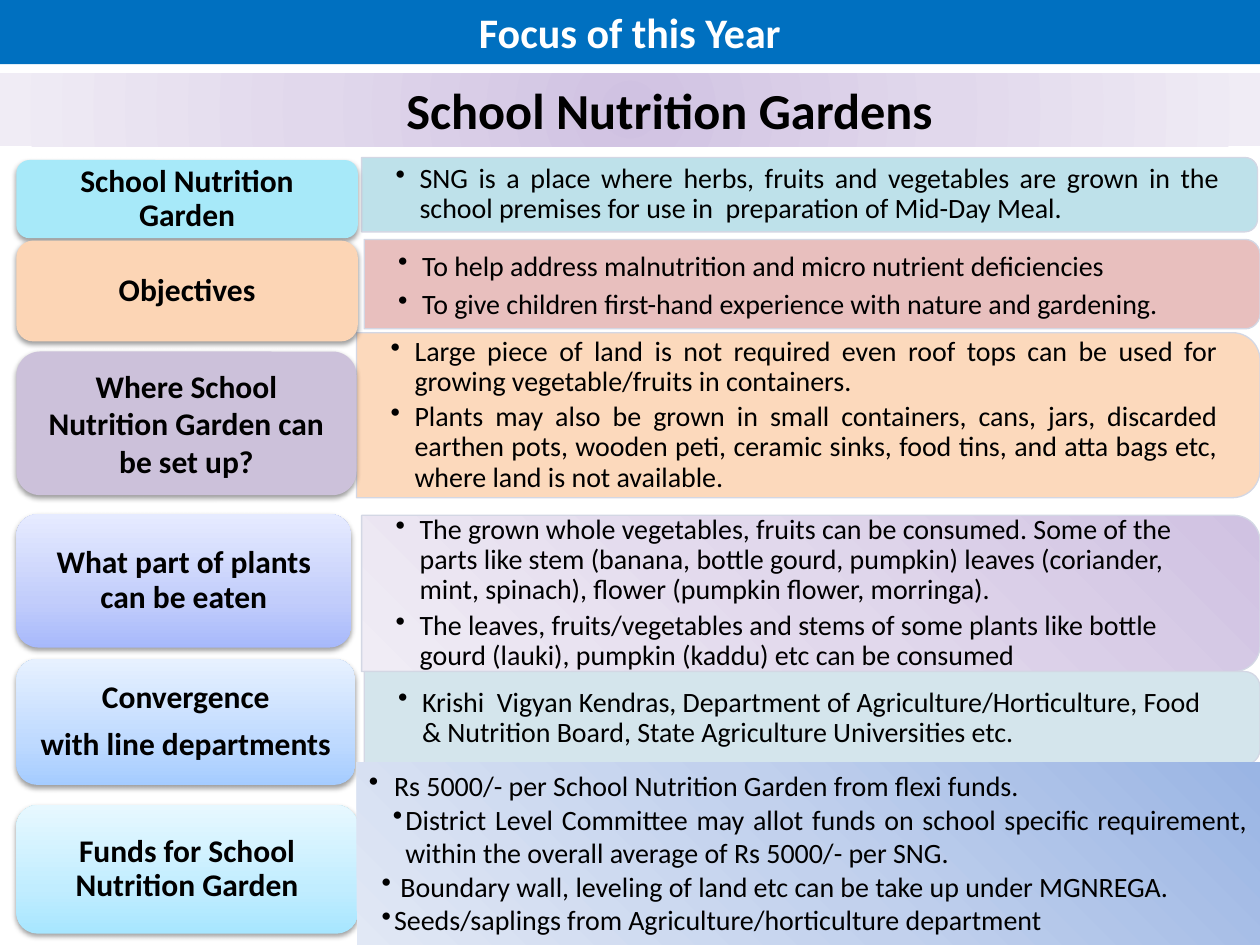
from dataclasses import dataclass

from lxml import etree
from pptx import Presentation
from pptx import util as u
from pptx.dml.color import RGBColor
from pptx.enum import shapes, text
from pptx.oxml import ns

Inches, Pt = u.Inches, u.Pt
Align, Anchor = text.PP_ALIGN, text.MSO_ANCHOR
FONT = "Calibri"
BLACK = RGBColor(0x00, 0x00, 0x00)
WHITE = RGBColor(0xFF, 0xFF, 0xFF)
BLUE = RGBColor(0x00, 0x70, 0xC0)
CYAN = RGBColor(0xA7, 0xE9, 0xF9)
TEAL = RGBColor(0xB7, 0xDE, 0xE8)
PINK = RGBColor(0xE6, 0xB9, 0xB8)
PEACH = RGBColor(0xFC, 0xD5, 0xB5)
LILAC = RGBColor(0xCC, 0xC1, 0xDA)
MIST = RGBColor(0xD0, 0xE3, 0xEA)
EDGE = RGBColor(0xD3, 0xD7, 0xE4)


@dataclass(frozen=True)
class Gradient:
    stops: tuple[tuple[int, RGBColor], ...]
    angle: int = 0
    focus: tuple[int, int, int, int] | None = None


@dataclass(frozen=True)
class Box:
    left: float
    top: float
    width: float
    height: float


@dataclass(frozen=True)
class Bullet:
    words: str
    align: Align = Align.LEFT
    margin: float = 0.19
    hanging: float = 0.19


@dataclass(frozen=True)
class Label:
    box: Box
    fill: RGBColor | Gradient
    lines: tuple[str, ...]
    inset: float = 0.12
    spacing: float = 0.9


@dataclass(frozen=True)
class Panel:
    box: Box
    fill: RGBColor | Gradient
    bullets: tuple[Bullet, ...]
    spacing: float = 0.9


def blend(positions: tuple[int, ...], *codes: str) -> tuple[tuple[int, RGBColor], ...]:
    return tuple((at, RGBColor.from_string(code)) for at, code in zip(positions, codes))


PURPLES = blend((0, 50, 100), "D0C2E2", "E1D8EC", "F0ECF5")
BLUES = blend((0, 50, 100), "9AB5E4", "C2D1ED", "E1E8F5")
VIOLET_RISE = Gradient(blend((0, 35, 100), "A7B9FB", "C2CDFB", "E6EBFF"), 270)
BLUE_RISE = Gradient(blend((0, 35, 100), "A5CCFF", "BFDAFF", "E7F1FF"), 270)
CYAN_RISE = Gradient(blend((0, 35, 100), "A7E6FF", "C1EDFF", "E7F8FF"), 270)

LABELS = (
    Label(Box(0.13, 1.27, 2.71, 0.62), CYAN, ("School Nutrition Garden",)),
    Label(Box(0.13, 1.91, 2.71, 0.8), PEACH, ("Objectives",)),
    Label(Box(0.13, 2.79, 2.7, 1.14), LILAC,
          ("Where School Nutrition Garden can be set up?",), 0.2, 1.0),
    Label(Box(0.13, 4.08, 2.66, 1.06), VIOLET_RISE, ("What part of plants can be eaten",)),
    Label(Box(0.13, 5.23, 2.69, 1), BLUE_RISE, ("Convergence", "with line departments")),
    Label(Box(0.13, 6.39, 2.71, 1.02), CYAN_RISE, ("Funds for School Nutrition Garden",)),
)
PANELS = (
    Panel(Box(2.87, 1.25, 7.11, 0.59), TEAL, (
        Bullet("SNG is a place where herbs, fruits and vegetables are grown in the school "
               "premises for use in  preparation of Mid-Day Meal.", Align.JUSTIFY),)),
    Panel(Box(2.89, 1.9, 7.11, 0.71), PINK, (
        Bullet("To help address malnutrition and micro nutrient deficiencies", Align.JUSTIFY),
        Bullet("To give children first-hand experience with nature and gardening.")), 1.0),
    Panel(Box(2.83, 2.64, 7.17, 1.31), PEACH, (
        Bullet("Large piece of land is not required even roof tops can be used for growing "
               "vegetable/fruits in containers.", Align.JUSTIFY),
        Bullet("Plants may also be grown in small containers, cans, jars, discarded earthen "
               "pots, wooden peti, ceramic sinks, food tins, and atta bags etc, where land "
               "is not available.", Align.JUSTIFY))),
    Panel(Box(2.87, 4.09, 7.13, 1.24), Gradient(PURPLES, 135), (
        Bullet("The grown whole vegetables, fruits can be consumed. Some of the parts like "
               "stem (banana, bottle gourd, pumpkin) leaves (coriander, mint, spinach), "
               "flower (pumpkin flower, morringa)."),
        Bullet("The leaves, fruits/vegetables and stems of some plants like bottle gourd "
               "(lauki), pumpkin (kaddu) etc can be consumed"))),
    Panel(Box(2.89, 5.33, 7.11, 0.74), MIST, (
        Bullet("Krishi  Vigyan Kendras, Department of Agriculture/Horticulture, Food & "
               "Nutrition Board, State Agriculture Universities etc."),)),
)
FUNDS = (
    Bullet("Rs 5000/- per School Nutrition Garden from flexi funds.", Align.JUSTIFY, 0.2, 0.2),
    Bullet("District Level Committee may allot funds on school specific requirement, within "
           "the overall average of Rs 5000/- per SNG.", Align.JUSTIFY, 0.29, 0.1),
    Bullet("Boundary wall, leveling of land etc can be take up under MGNREGA.",
           Align.JUSTIFY, 0.25, 0.15),
    Bullet("Seeds/saplings from Agriculture/horticulture department", Align.JUSTIFY, 0.2, 0.1),
)


def add(parent, tag: str, **attributes):
    return etree.SubElement(parent, ns.qn(tag), {k: str(v) for k, v in attributes.items()})


def paint(shape, fill: RGBColor | Gradient, opacity: int = 100) -> None:
    shape.fill.solid()
    solid = shape._element.spPr.find(ns.qn("a:solidFill"))
    if isinstance(fill, RGBColor):
        shape.fill.fore_color.rgb = fill
        if opacity < 100:
            add(solid[0], "a:alpha", val=opacity * 1000)
        return
    gradient = etree.Element(ns.qn("a:gradFill"), rotWithShape="0")
    stops = add(gradient, "a:gsLst")
    for position, color in fill.stops:
        add(add(stops, "a:gs", pos=position * 1000), "a:srgbClr", val=color)
    if fill.focus:
        way = add(gradient, "a:path", path="circle")
        add(way, "a:fillToRect", **{side: v * 1000 for side, v in zip("ltrb", fill.focus)})
    else:
        add(gradient, "a:lin", ang=fill.angle * 60000, scaled=0)
    solid.getparent().replace(solid, gradient)


def place(box: Box) -> tuple[u.Length, ...]:
    return Inches(box.left), Inches(box.top), Inches(box.width), Inches(box.height)


def add_block(page, kind, box: Box, fill: RGBColor | Gradient, opacity: int = 100):
    shape = page.shapes.add_shape(kind, *place(box))
    shape.shadow.inherit = False
    paint(shape, fill, opacity)
    shape.line.fill.background()
    return shape


def set_frame(shape, anchor: Anchor, across: float, down: float):
    frame = shape.text_frame
    frame.word_wrap = True
    frame.vertical_anchor = anchor
    frame.margin_left = frame.margin_right = Inches(across)
    frame.margin_top = frame.margin_bottom = Inches(down)
    return frame


def write(frame, lines, size: float, color: RGBColor, bold: bool,
          align: Align = Align.CENTER, spacing: float = 1.0, after: float = 0) -> None:
    frame.text = "\n".join(lines)
    for para in frame.paragraphs:
        para.alignment = align
        para.line_spacing = spacing
        para.space_after = Pt(after)
        para.font.name, para.font.size, para.font.bold = FONT, Pt(size), bold
        para.font.color.rgb = color


def write_bullets(frame, bullets: tuple[Bullet, ...], spacing: float, after: float) -> None:
    write(frame, [b.words for b in bullets], 16, BLACK, False, spacing=spacing, after=after)
    for para, bullet in zip(frame.paragraphs, bullets):
        para.alignment = bullet.align
        props = para._p.get_or_add_pPr()
        props.set("marL", str(Inches(bullet.margin)))
        props.set("indent", str(-Inches(bullet.hanging)))
        mark = etree.Element(ns.qn("a:buChar"), char="•")
        props.find(ns.qn("a:defRPr")).addprevious(mark)


def draw_label(page, label: Label) -> None:
    shape = add_block(page, shapes.MSO_SHAPE.ROUNDED_RECTANGLE, label.box, label.fill)
    effects = shape._element.spPr.find(ns.qn("a:effectLst"))
    shadow = add(effects, "a:outerShdw", blurRad=Pt(3.1), dist=Pt(1.6), dir=5400000, rotWithShape=0)
    add(add(shadow, "a:srgbClr", val=BLACK), "a:alpha", val=38000)
    frame = set_frame(shape, Anchor.MIDDLE, label.inset, 0.08)
    write(frame, label.lines, 18, BLACK, True, spacing=label.spacing, after=7.7)


def draw_panel(page, panel: Panel) -> None:
    box = panel.box
    shift = (box.width - box.height) / 2
    upright = Box(box.left + shift, box.top - shift, box.height, box.width)
    shape = add_block(page, shapes.MSO_SHAPE.ROUND_2_SAME_RECTANGLE, upright, panel.fill, 90)
    shape.rotation = 90
    shape.line.color.rgb, shape.line.width = EDGE, Pt(0.75)
    curve = 0.05 * box.height
    inner = Box(box.left, box.top + curve, box.width - curve, box.height - 2 * curve)
    frame = set_frame(page.shapes.add_textbox(*place(inner)), Anchor.MIDDLE, 0.27, 0.14)
    write_bullets(frame, panel.bullets, panel.spacing, 2.9)


def main() -> None:
    deck = Presentation()
    deck.slide_width, deck.slide_height = Inches(10), Inches(7.5)
    page = deck.slides.add_slide(deck.slide_layouts[5])

    title = page.shapes.title
    title.left, title.top, title.width, title.height = place(Box(0, 0.58, 10, 0.58))
    paint(title, Gradient(PURPLES, focus=(50, 50, 50, 50)))
    frame = set_frame(title, Anchor.MIDDLE, 0.07, 0.04)
    frame.margin_left = Inches(0.7)
    write(frame, ["School Nutrition Gardens"], 28.8, BLACK, True)

    for panel in PANELS:
        draw_panel(page, panel)
    for label in LABELS:
        draw_label(page, label)

    rectangle = shapes.MSO_SHAPE.RECTANGLE
    funds = add_block(page, rectangle, Box(2.83, 6.05, 7.17, 1.45),
                      Gradient(BLUES, focus=(100, 0, 0, 100)))
    write_bullets(set_frame(funds, Anchor.TOP, 0.1, 0.05), FUNDS, 1.0, 0)
    banner = add_block(page, rectangle, Box(0, 0, 10, 0.51), BLUE)
    write(set_frame(banner, Anchor.TOP, 0.1, 0.05), ["Focus of this Year"], 24, WHITE, True)
    deck.save("out.pptx")


if __name__ == "__main__":
    main()
